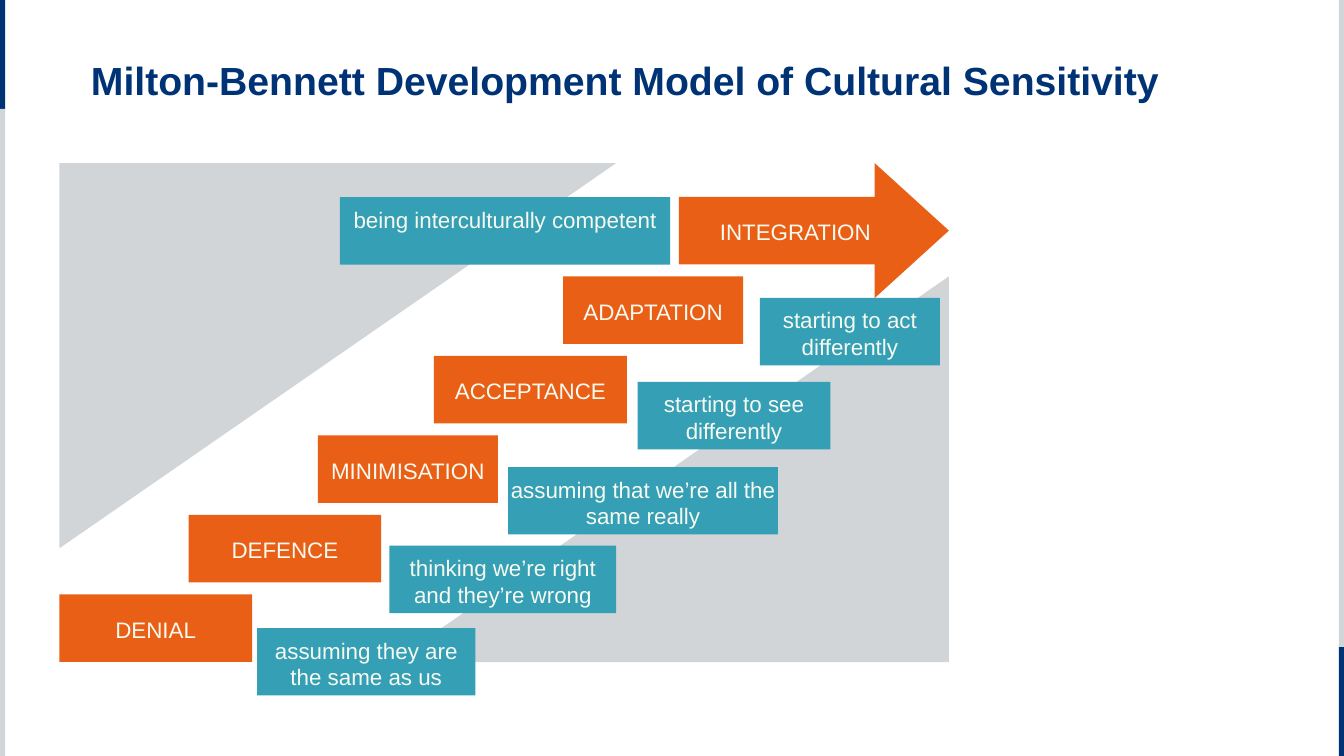
"""Build the slide on the Milton-Bennett model of cultural sensitivity."""
from dataclasses import dataclass

from pptx import Presentation
from pptx.dml.color import RGBColor
from pptx.enum.shapes import MSO_SHAPE
from pptx.enum.text import MSO_ANCHOR, MSO_AUTO_SIZE, PP_ALIGN
from pptx.shapes.autoshape import Shape
from pptx.slide import Slide
from pptx.text.text import TextFrame
from pptx.util import Pt

NAVY = RGBColor(0x00, 0x33, 0x75)
GREY = RGBColor(0xD1, 0xD5, 0xD8)
ORANGE = RGBColor(0xEA, 0x5F, 0x16)
TEAL = RGBColor(0x35, 0x9F, 0xB5)
PALE = RGBColor(0xF6, 0xFA, 0xF1)
WHITE = RGBColor(0xFF, 0xFF, 0xFF)

WIDTH, HEIGHT = 960, 540
BAR_W, BAR_SHORT = 3.6, 77.8
BOX_H, FIRST_TOP, STEP_UP = 48.2, 424.6, 56.8
STAGE_INSET, NOTE_INSET = 15.4, 6.2
ARROW_H = 2 * BOX_H


@dataclass
class Box:
    left: float
    top: float
    width: float
    height: float


@dataclass
class Stage:
    name: str
    left: float
    width: float
    note: str
    note_left: float
    note_top: float
    note_width: float


STAGES = [
    Stage("DENIAL", 42.5, 137.6, "assuming they are the same as us", 183.6, 448.6, 156),
    Stage("DEFENCE", 134.8, 137.6, "thinking we’re right and they’re wrong", 278.2, 389.8, 162),
    Stage("MINIMISATION", 227, 128.6, "assuming that we’re all the same really", 363, 333.6, 192.6),
    Stage("ACCEPTANCE", 310, 137.8, "starting to see differently", 455.4, 272.8, 137.8),
    Stage("ADAPTATION", 402.2, 128.6, "starting to act differently", 542.8, 212.8, 128.6),
    Stage("INTEGRATION", 485, 192.8, "being interculturally competent", 242.8, 140.8, 236),
]
TRIANGLES = [
    [(42.5, 116.6), (440, 116.6), (42.5, 391.6)],
    [(677.8, 473), (677.8, 197.4), (280.2, 473)],
]
BARS = [
    (Box(0, 0, BAR_W, BAR_SHORT), NAVY),
    (Box(0, BAR_SHORT, BAR_W, HEIGHT - BAR_SHORT), GREY),
    (Box(WIDTH - BAR_W, 0, BAR_W, HEIGHT - BAR_SHORT), GREY),
    (Box(WIDTH - BAR_W, HEIGHT - BAR_SHORT, BAR_W, BAR_SHORT), NAVY),
]


def paint(sp: Shape, color: RGBColor) -> None:
    """Give a shape a plain fill without line or shadow."""
    sp.shadow.inherit = False
    sp.fill.solid()
    sp.fill.fore_color.rgb = color
    sp.line.fill.background()


def add_box(s: Slide, box: Box, color: RGBColor,
            kind: MSO_SHAPE = MSO_SHAPE.RECTANGLE) -> Shape:
    """Add a filled preset shape."""
    sp = s.shapes.add_shape(kind, Pt(box.left), Pt(box.top), Pt(box.width), Pt(box.height))
    paint(sp, color)
    return sp


def set_text(tf: TextFrame, text: str, size: float, color: RGBColor,
             align: PP_ALIGN, inset: float = 0, bold: bool = False) -> None:
    """Write one top-anchored paragraph."""
    tf.text = text
    tf.word_wrap = True
    tf.auto_size = MSO_AUTO_SIZE.NONE
    tf.vertical_anchor = MSO_ANCHOR.TOP
    tf.margin_left = tf.margin_right = tf.margin_bottom = Pt(0)
    tf.margin_top = Pt(inset)
    p = tf.paragraphs[0]
    p.alignment = align
    f = p.runs[0].font
    f.name, f.size, f.bold = "Arial", Pt(size), bold
    f.color.rgb = color


def add_title(s: Slide, text: str) -> None:
    """Place and format the slide title."""
    sp = s.shapes.title
    sp.left, sp.top, sp.width, sp.height = Pt(65), Pt(44), Pt(860), Pt(68)
    set_text(sp.text_frame, text, 28, NAVY, PP_ALIGN.LEFT, bold=True)
    sp.text_frame.paragraphs[0].line_spacing = 0.9


def add_triangle(s: Slide, points: list[tuple[float, float]]) -> None:
    """Add a grey background triangle."""
    start, *rest = [(Pt(x), Pt(y)) for x, y in points]
    fb = s.shapes.build_freeform(*start)
    fb.add_line_segments(rest, close=True)
    paint(fb.convert_to_shape(), GREY)


def add_stage(s: Slide, stage: Stage, index: int) -> None:
    """Add a stage with its note; the last stage is an arrow."""
    top = FIRST_TOP - index * STEP_UP
    if index == len(STAGES) - 1:
        box = Box(stage.left, top - BOX_H / 2, stage.width, ARROW_H)
        sp = add_box(s, box, ORANGE, MSO_SHAPE.RIGHT_ARROW)
        sp.adjustments[1] = 0.55
    else:
        sp = add_box(s, Box(stage.left, top, stage.width, BOX_H), ORANGE)
    set_text(sp.text_frame, stage.name, 16, PALE, PP_ALIGN.CENTER, STAGE_INSET)
    note = add_box(s, Box(stage.note_left, stage.note_top, stage.note_width, BOX_H), TEAL)
    set_text(note.text_frame, stage.note, 16, PALE, PP_ALIGN.CENTER, NOTE_INSET)


def main() -> None:
    """Build and save the presentation."""
    prs = Presentation()
    prs.slide_width, prs.slide_height = Pt(WIDTH), Pt(HEIGHT)
    s = prs.slides.add_slide(prs.slide_layouts[5])
    s.background.fill.solid()
    s.background.fill.fore_color.rgb = WHITE
    for box, color in BARS:
        add_box(s, box, color)
    add_title(s, "Milton-Bennett Development Model of Cultural Sensitivity")
    for points in TRIANGLES:
        add_triangle(s, points)
    for index, stage in enumerate(STAGES):
        add_stage(s, stage, index)
    prs.save("out.pptx")


if __name__ == "__main__":
    main()
